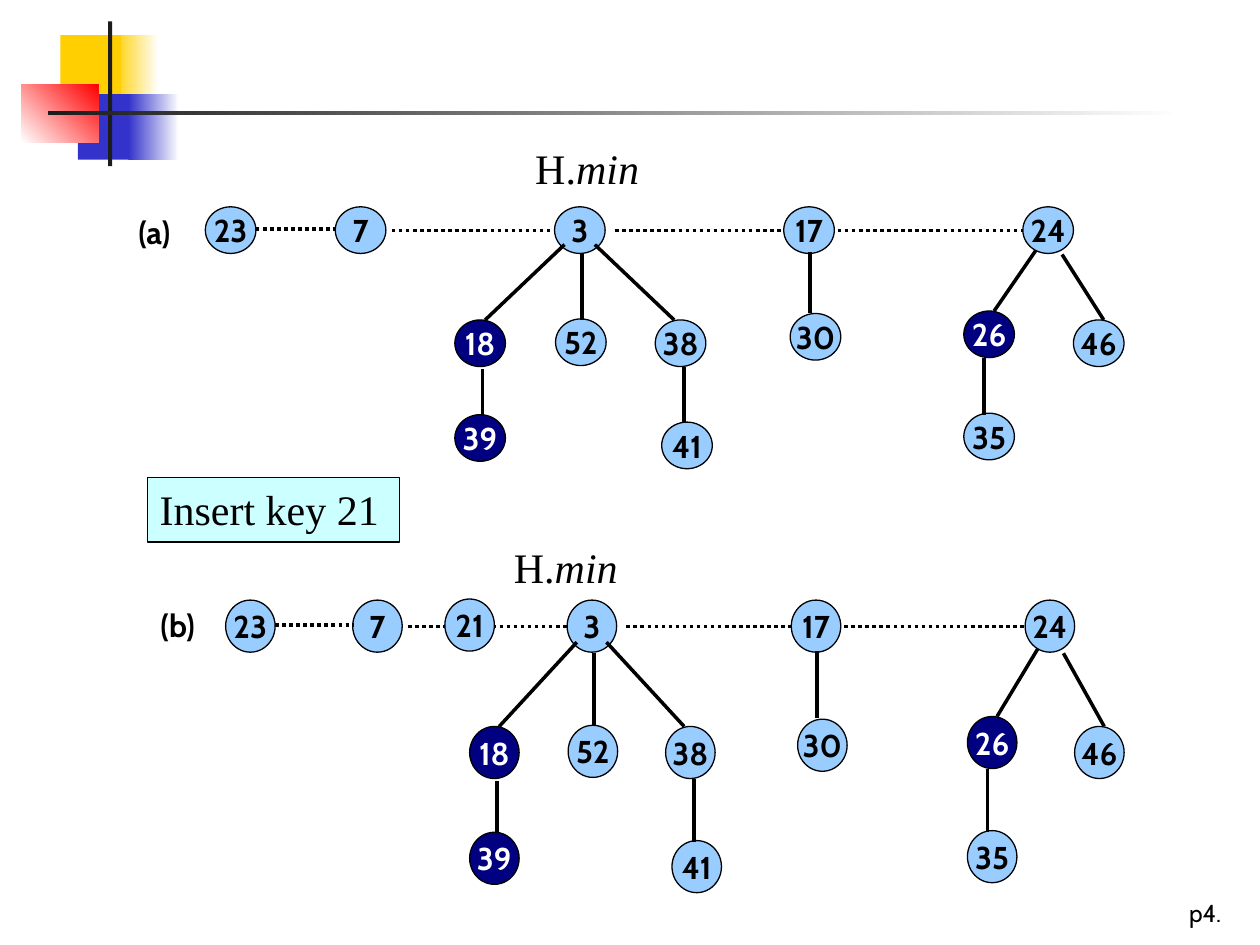
from dataclasses import dataclass

from pptx import Presentation
from pptx.dml.color import RGBColor
from pptx.enum.dml import MSO_LINE
from pptx.enum.shapes import MSO_CONNECTOR, MSO_SHAPE
from pptx.enum.text import MSO_ANCHOR, MSO_AUTO_SIZE, PP_ALIGN
from pptx.oxml.ns import qn
from pptx.util import Cm, Pt
from lxml import etree

RECT, OVAL = MSO_SHAPE.RECTANGLE, MSO_SHAPE.OVAL
STRAIGHT, DOTTED = MSO_CONNECTOR.STRAIGHT, MSO_LINE.ROUND_DOT
MIDDLE, TOP = MSO_ANCHOR.MIDDLE, MSO_ANCHOR.TOP
CENTER, LEFT = PP_ALIGN.CENTER, PP_ALIGN.LEFT
NO_FIT = MSO_AUTO_SIZE.NONE


@dataclass(frozen=True)
class Theme:
    black: str = "000000"
    white: str = "FFFFFF"
    node: str = "99CCFF"
    marked: str = "000080"
    callout: str = "CCFFFF"
    gold: str = "FFCF01"
    blue: str = "3333CC"
    red: str = "FF0000"
    bar: str = "1C1C1C"
    key_font: str = "Cabin"
    note_font: str = "Times New Roman"
    page_size: float = 14
    key_size: float = 18
    note_size: float = 24
    outline: float = 0.75
    edge: float = 2


@dataclass(frozen=True)
class Frame:
    x_scale: float = 1
    y_scale: float = 1
    x_shift: float = 0
    y_shift: float = 0

    def point(self, x, y):
        return self.x_shift + x * self.x_scale, self.y_shift + y * self.y_scale

    def box(self, x, y, width, height):
        return *self.point(x, y), width * self.x_scale, height * self.y_scale


NODE_WIDTH, NODE_HEIGHT = 1.02, 0.94
ROOT_TOP, ROOT_LINE = 4.17, 4.65
MARKED_KEYS = {18, 26, 39}
NODES = {
    23: (4.14, ROOT_TOP), 7: (6.76, ROOT_TOP), 3: (11.18, ROOT_TOP),
    17: (15.8, ROOT_TOP), 24: (20.62, ROOT_TOP),
    18: (9.17, 6.45), 52: (11.2, 6.43), 38: (13.21, 6.45),
    30: (15.93, 6.32), 26: (19.43, 6.27), 46: (21.64, 6.45),
    39: (9.17, 8.36), 41: (13.34, 8.51), 35: (19.43, 8.33),
}
ROOT_LINKS = [
    (5.16, 4.62, 6.76, 4.62),
    (7.9, ROOT_LINE, 11.18, ROOT_LINE),
    (12.4, ROOT_LINE, 15.8, ROOT_LINE),
    (16.89, ROOT_LINE, 20.62, ROOT_LINE),
]
CHILD_LINKS = [
    (11.38, 4.93, 9.78, 6.45), (11.73, 5.13, 11.73, 6.45),
    (11.99, 4.93, 13.59, 6.45), (9.73, 7.44, 9.73, 8.38),
    (13.79, 7.39, 13.79, 8.53), (16.33, 5.08, 16.33, 6.3),
    (20.88, 5.05, 20.04, 6.27), (21.41, 5.13, 22.25, 6.45),
    (19.84, 7.21, 19.84, 8.36),
]
BEFORE = Frame()
AFTER = Frame(0.978, 1.117, 0.5, 7.44)


class HeapSlide:
    """Draws Fibonacci heap elements on one slide in a shared style."""

    def __init__(self, slide, theme):
        self.shapes = slide.shapes
        self.theme = theme

    def typeset(self, frame, runs, **formats):
        settings = dict(auto_size=NO_FIT, word_wrap=False, vertical_anchor=TOP)
        align = formats.pop("align", LEFT)
        color = RGBColor.from_string(formats.pop("color", self.theme.black))
        for name, value in settings.items():
            setattr(frame, name, value)
        paragraph = frame.paragraphs[0]
        paragraph.alignment = align
        for words, italic in runs:
            run = paragraph.add_run()
            run.text = words
            for name, value in {**formats, "italic": italic}.items():
                setattr(run.font, name, value)
            run.font.color.rgb = color

    def label(self, box, *runs, **formats):
        caption = self.shapes.add_textbox(*map(Cm, box))
        self.typeset(caption.text_frame, runs, **formats)

    def panel(self, box, *colors, kind=RECT, outlined=False, angle=0):
        panel = self.shapes.add_shape(kind, *map(Cm, box))
        panel.shadow.inherit = False
        if len(colors) == 1:
            panel.fill.solid()
            panel.fill.fore_color.rgb = RGBColor.from_string(colors[0])
        else:
            panel.fill.gradient()
            panel.fill.gradient_angle = angle
            for stop, color in zip(panel.fill.gradient_stops, colors):
                stop.color.rgb = RGBColor.from_string(color)
        if outlined:
            panel.line.color.rgb = RGBColor.from_string(self.theme.black)
            panel.line.width = Pt(self.theme.outline)
        else:
            panel.line.fill.background()
        return panel

    def node(self, frame, key, x, y):
        theme = self.theme
        fill, ink = (theme.marked, theme.white) if key in MARKED_KEYS else (theme.node, theme.black)
        box = frame.box(x, y, NODE_WIDTH, NODE_HEIGHT)
        text = self.panel(box, fill, kind=OVAL, outlined=True).text_frame
        self.typeset(text, [(str(key), False)], name=theme.key_font,
                     size=Pt(theme.key_size), bold=True, color=ink, align=CENTER)
        text.vertical_anchor = MIDDLE

    def link(self, frame, x1, y1, x2, y2, dash=None):
        ends = *frame.point(x1, y1), *frame.point(x2, y2)
        edge = self.shapes.add_connector(STRAIGHT, *map(Cm, ends))
        edge.line.color.rgb = RGBColor.from_string(self.theme.black)
        edge.line.width = Pt(self.theme.edge)
        if dash:
            edge.line.dash_style = dash
        etree.SubElement(edge._element.spPr, qn("a:effectLst"))

    def heap(self, frame, caption, min_at):
        theme = self.theme
        self.label((*frame.point(2.54, 4.17), 1.48, 1.02), (caption, False),
                   name=theme.key_font, size=Pt(theme.key_size), bold=True)
        for key, place in NODES.items():
            self.node(frame, key, *place)
        for ends in ROOT_LINKS:
            self.link(frame, *ends, dash=DOTTED)
        for ends in CHILD_LINKS:
            self.link(frame, *ends)
        self.label((*min_at, 2.62, 1.27), ("H.", False), ("min", True),
                   name=theme.note_font, size=Pt(theme.note_size))

    def callout(self, box, words):
        theme = self.theme
        text = self.panel(box, theme.callout, outlined=True).text_frame
        self.typeset(text, [(words, False)], name=theme.note_font, size=Pt(theme.note_size))
        text.word_wrap = True

    def ornament(self):
        theme = self.theme
        self.panel((2.29, 0.71, 0.91, 1.32), theme.gold, theme.white)
        self.panel((1.22, 0.71, 1.22, 1.32), theme.gold)
        self.panel((1.57, 1.9, 1.17, 1.32), theme.blue)
        self.panel((2.59, 1.9, 1.02, 1.32), theme.blue, theme.white)
        self.panel((0.43, 1.7, 1.55, 1.17), theme.white, theme.red, angle=45)
        self.panel((2.18, 0.43, 0.08, 2.92), theme.bar)
        self.panel((0.97, 2.24, 22.86, 0.08), theme.bar, theme.white)


def main():
    deck = Presentation()
    deck.slide_width, deck.slide_height = Cm(25.4), Cm(19.05)
    theme = Theme()
    page = HeapSlide(deck.slides.add_slide(deck.slide_layouts[6]), theme)
    page.ornament()
    page.label((23.72, 17.98, 1.68, 0.84), ("p4.", False),
               name=theme.key_font, size=Pt(theme.page_size))
    page.heap(BEFORE, "(a)", (10.54, 2.74))
    page.heap(AFTER, "(b)", (10.11, 10.8))
    page.node(AFTER, 21, 8.66, 4.15)
    page.callout((2.97, 9.63, 5.08, 1.3), "Insert key 21")
    deck.save("out.pptx")


if __name__ == "__main__":
    main()
